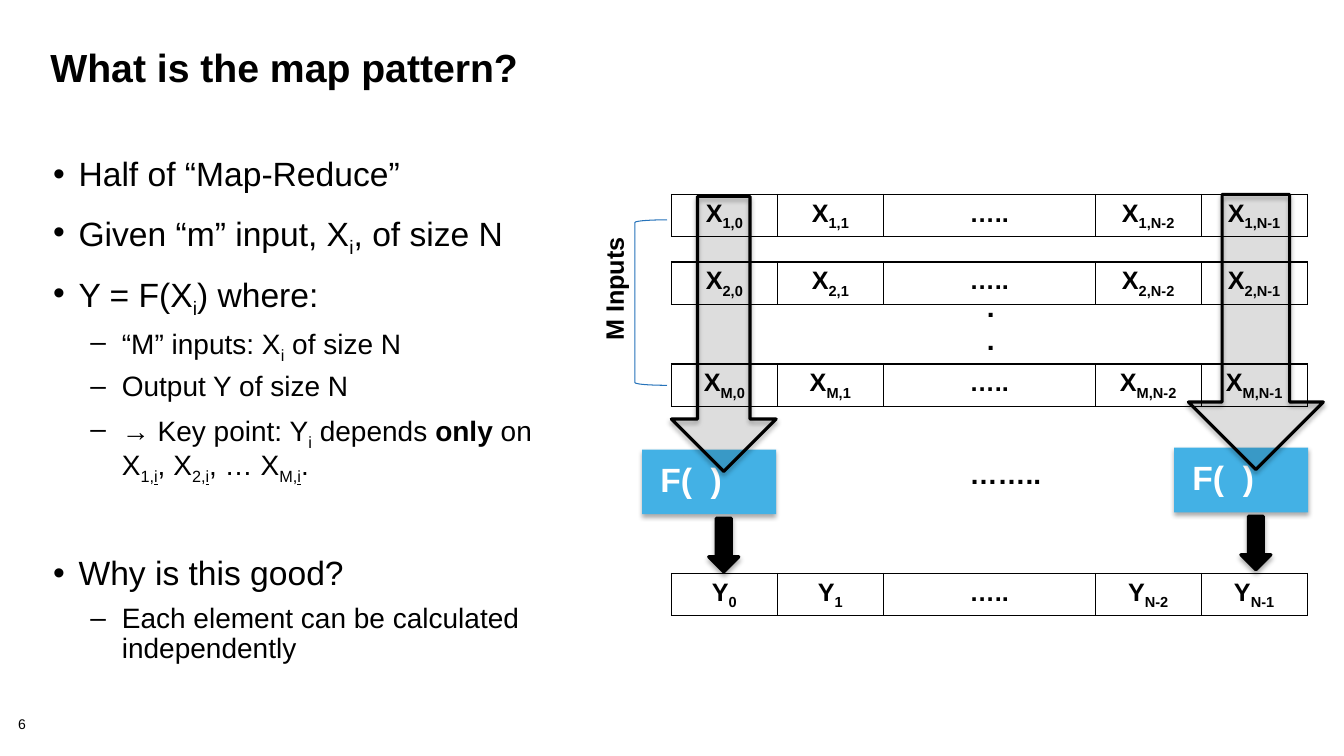
from lxml import etree
from pptx import Presentation
from pptx import util as u
from pptx.dml.color import RGBColor
from pptx.enum import shapes, text
from pptx.oxml.ns import qn

ALIGN = {"l": text.PP_ALIGN.LEFT, "c": text.PP_ALIGN.CENTER}
ANCHOR = {"t": text.MSO_ANCHOR.TOP, "m": text.MSO_ANCHOR.MIDDLE}
MARKS = {"_": {"sub": True}, "~": {"sub": True, "underline": True}, "*": {"bold": True}}


def child(parent, tag, **attributes):
    return etree.SubElement(parent, qn(tag), {k: str(v) for k, v in attributes.items()})


def paint(target, color):
    target.solid()
    target.fore_color.rgb = RGBColor.from_string(color)


def write(paragraph, content, size=18, color="000000", bold=False, align="l",
          spacing=0.9, before=0, bullet=None, indent=(0, 0), tab=None):
    properties = paragraph._p.get_or_add_pPr()
    properties.set("marL", str(u.Cm(indent[0])))
    properties.set("indent", str(u.Cm(indent[1])))
    if bullet:
        child(child(properties, "a:buClr"), "a:srgbClr", val=color)
        child(properties, "a:buFont", typeface="Arial")
        child(properties, "a:buChar", char=bullet)
    if tab:
        child(child(properties, "a:tabLst"), "a:tab", pos=u.Cm(tab), algn="l")
    paragraph.alignment = ALIGN[align]
    paragraph.line_spacing = spacing
    paragraph.space_before = u.Pt(before)
    for part in content.split("|"):
        marks = MARKS.get(part[0], {})
        run = paragraph.add_run()
        run.text = part[1:] if marks else part
        run.font.name = "Arial"
        run.font.size = u.Pt(size)
        run.font.bold = marks.get("bold", bold)
        paint(run.font.fill, color)
        if marks.get("underline"):
            run.font.underline = True
        if marks.get("sub"):
            run.font._element.set("baseline", "-25000")


class MapSlide:
    blue, black, white, bracket_blue = "43B1E5", "000000", "FFFFFF", "2673BA"

    def __init__(self, presentation):
        self.slide = presentation.slides.add_slide(presentation.slide_layouts[1])
        self.shapes = self.slide.shapes

    def frame(self, shape, lines, insets=(0.25, 0.13), anchor="t", wrap=True, **style):
        frame = shape.text_frame
        frame.auto_size = text.MSO_AUTO_SIZE.NONE
        frame.word_wrap = wrap
        frame.vertical_anchor = ANCHOR[anchor]
        frame.margin_left = frame.margin_right = u.Cm(insets[0])
        frame.margin_top = frame.margin_bottom = u.Cm(insets[1])
        for number, line in enumerate(lines):
            content, extra = line if isinstance(line, tuple) else (line, {})
            paragraph = frame.add_paragraph() if number else frame.paragraphs[0]
            paragraph.level = extra.get("level", 0)
            own = {k: v for k, v in extra.items() if k != "level"}
            write(paragraph, content, **{**style, **own})
        return frame

    def placeholder(self, index, box, lines, **style):
        holder = self.slide.placeholders[index]
        holder.left, holder.top, holder.width, holder.height = map(u.Cm, box)
        self.frame(holder, lines, **style)

    def label(self, box, lines, vertical=None, **style):
        frame = self.frame(self.shapes.add_textbox(*map(u.Cm, box)), lines, **style)
        if vertical:
            frame._txBody.bodyPr.set("vert", vertical)

    def vector(self, top, cells):
        unit = 2.67
        table = self.shapes.add_table(1, 5, u.Cm(16.92), u.Cm(top), u.Cm(6 * unit), u.Cm(1.04)).table
        table.first_row = table.horz_banding = False
        for column, (cell, content) in enumerate(zip(table.rows[0].cells, cells)):
            table.columns[column].width = u.Cm(unit * (2 if column == 2 else 1))
            write(cell.text_frame.paragraphs[0], content, bold=True, align="c", spacing=1)
            properties = cell._tc.get_or_add_tcPr()
            for side in ("a:lnL", "a:lnR", "a:lnT", "a:lnB"):
                edge = child(properties, side, w=u.Pt(1))
                child(child(edge, "a:solidFill"), "a:srgbClr", val=self.black)
            cell.fill.background()

    def shape(self, kind, box, fill=None, line=None, width=2.25, opacity=None, shadow=True):
        shape = self.shapes.add_shape(kind, *map(u.Cm, box))
        shape.shadow.inherit = False
        if fill:
            paint(shape.fill, fill)
        else:
            shape.fill.background()
        if line:
            paint(shape.line.fill, line)
            shape.line.width = u.Pt(width)
        else:
            shape.line.fill.background()
        if opacity:
            child(shape._element.spPr.find(".//" + qn("a:srgbClr")), "a:alpha", val=opacity * 1000)
        if shadow:
            effects = shape._element.spPr.find(qn("a:effectLst"))
            outer = child(effects, "a:outerShdw", blurRad=u.Pt(3.5), dist=u.Pt(2.2),
                          dir=5400000, rotWithShape=0)
            child(child(outer, "a:srgbClr", val=self.black), "a:alpha", val=32000)
        return shape

    def mapping(self, center, top, width):
        down = shapes.MSO_SHAPE.DOWN_ARROW
        function = self.shape(shapes.MSO_SHAPE.RECTANGLE, (center - 2.06, top + 6.38, 3.38, 1.63), self.blue)
        self.frame(function, ["F(\t)"], insets=(0.46, 0.18), anchor="m", size=24,
                   color=self.white, bold=True, tab=2.21)
        inputs = self.shape(down, (center - width / 2, top, width, 6.93), self.black, self.black, opacity=10)
        result = self.shape(down, (center - 0.38, top + 8.11, 0.76, 1.35), self.black, self.black)
        self.shapes.add_group_shape([function, inputs, result])


def main():
    presentation = Presentation()
    presentation.slide_width, presentation.slide_height = u.Cm(33.87), u.Cm(19.05)
    slide = MapSlide(presentation)

    slide.placeholder(0, (1.02, 1.14, 31.6, 2.54), ["What is the map pattern?"],
                      size=28, bold=True, spacing=0.85)
    point = dict(size=24, before=14, bullet="•", indent=(0.64, -0.64))
    detail = dict(size=20, before=8, bullet="–", indent=(1.73, -0.79), level=1)
    slide.placeholder(1, (1.09, 3.84, 13.41, 11.25), [
        ("Half of “Map-Reduce”", {**point, "before": 0}),
        ("Given “m” input, X|_i|, of size N", point),
        ("Y = F(X|_i|) where:", point),
        ("“M” inputs: X|_i| of size N", detail),
        ("Output Y of size N", detail),
        ("→ Key point: Y|_i| depends |*only| on X|_1,|~i|, X|_2,|~i|, … X|_M,|~i|.", detail),
        ("Why is this good?", {**point, "before": 53}),
        ("Each element can be calculated independently", detail),
    ])
    slide.label((0.46, 18.08, 1.42, 0.41), ["6"], insets=(0, 0), size=10)

    for top, name, row in ((4.9, "X", "1,"), (6.6, "X", "2,"), (9.17, "X", "M,"), (14.45, "Y", "")):
        first, second, penultimate, last = (f"{name}|_{row}{i}" for i in ("0", "1", "N-2", "N-1"))
        slide.vector(top, (first, second, "…..", penultimate, last))

    centered = dict(insets=(0.33, 0.25), anchor="m", bold=True, align="c", size=20, spacing=1)
    slide.label((24.54, 7.01, 0.81, 2.24), [".", "."], **centered)
    slide.shape(shapes.MSO_SHAPE.LEFT_BRACKET, (16, 5.54, 0.81, 4.17),
                line=slide.bracket_blue, width=0.75, shadow=False)
    slide.label((14.83, 5.77, 1.37, 3.15), ["M Inputs"], vertical="vert270",
                insets=(0.25, 0.33), anchor="m", wrap=False, bold=True)
    slide.mapping(18.24, 4.95, 2.64)
    slide.mapping(31.65, 4.9, 3.4)
    slide.label((23.65, 11.23, 3.38, 1.37), ["…….."], **centered)
    presentation.save("out.pptx")


if __name__ == "__main__":
    main()
